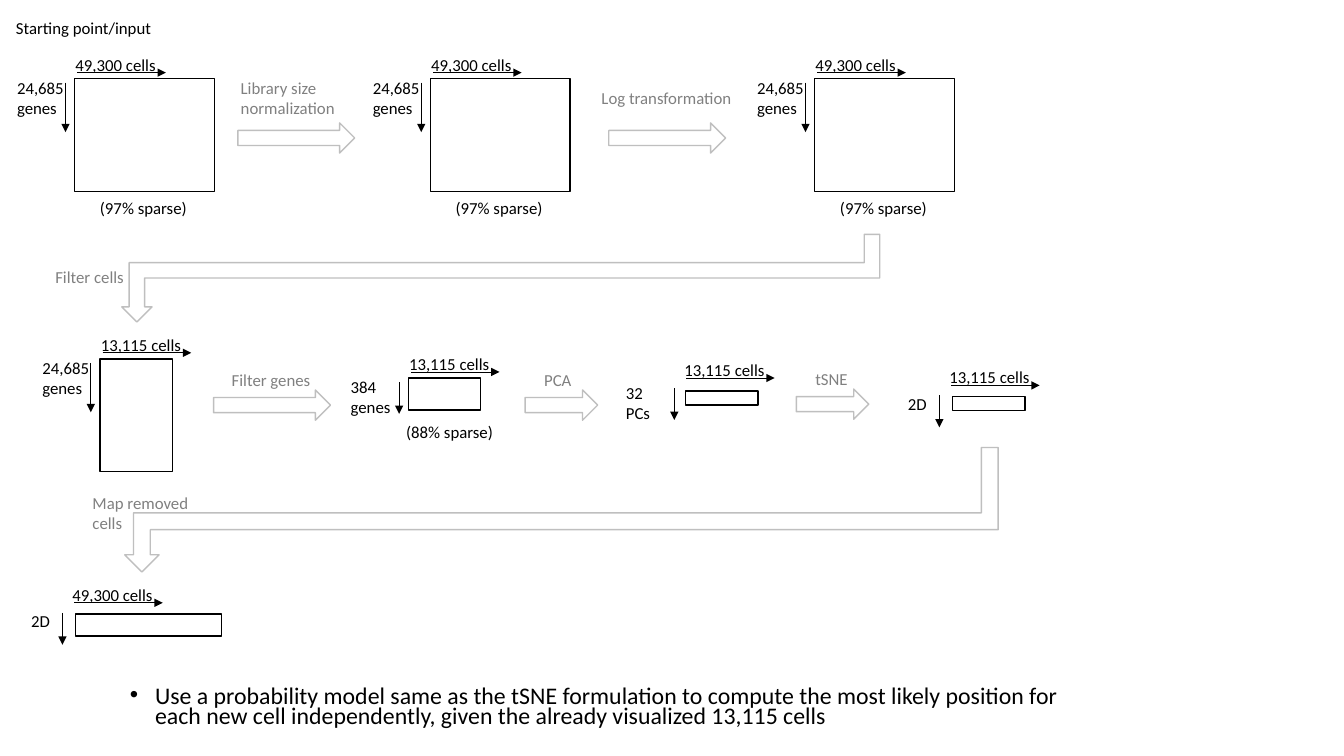
from dataclasses import dataclass

from lxml import etree
from pptx import Presentation
from pptx.dml.color import RGBColor
from pptx.enum.shapes import MSO_CONNECTOR, MSO_SHAPE
from pptx.oxml.ns import qn
from pptx.util import Pt

RECT = MSO_SHAPE.RECTANGLE
RIGHT_ARROW = MSO_SHAPE.RIGHT_ARROW
STRAIGHT = MSO_CONNECTOR.STRAIGHT


@dataclass(frozen=True)
class Theme:
    font: str = "Calibri"
    ink: RGBColor = RGBColor(0, 0, 0)
    step: RGBColor = RGBColor(0x80, 0x80, 0x80)
    arrow: RGBColor = RGBColor(0xBF, 0xBF, 0xBF)
    paper: RGBColor = RGBColor(0xFF, 0xFF, 0xFF)
    label: int = 12
    body: int = 17
    outline: float = 1
    axis: float = 0.5


THEME = Theme()
TALL, SHORT = 35.3, 22.8  # lengths of the row axes


def add_text(slide, text, x, y, w, h=None, color=THEME.ink, size=THEME.label, wrap=False):
    lines = text.split("\n")
    h = h or 7.2 + 14.4 * len(lines)
    sp = slide.shapes.add_textbox(Pt(x), Pt(y), Pt(w), Pt(h))
    tf = sp.text_frame
    tf.word_wrap = wrap
    for i, line in enumerate(lines):
        p = tf.add_paragraph() if i else tf.paragraphs[0]
        r = p.add_run()
        r.text = line
        r.font.name, r.font.size = THEME.font, Pt(size)
        r.font.color.rgb = color
    return tf


def outline(sp, color, fill=None):
    sp.shadow.inherit = False
    sp.line.color.rgb = color
    sp.line.width = Pt(THEME.outline)
    if fill is None:
        sp.fill.background()
    else:
        sp.fill.solid()
        sp.fill.fore_color.rgb = fill


def add_axis(slide, x1, y1, x2, y2):
    line = slide.shapes.add_connector(STRAIGHT, Pt(x1), Pt(y1), Pt(x2), Pt(y2))
    line.line.color.rgb = THEME.ink
    line.line.width = Pt(THEME.axis)
    etree.SubElement(line.line._get_or_add_ln(), qn("a:tailEnd"), type="triangle")
    etree.SubElement(line._element.spPr, qn("a:effectLst"))


def add_matrix(slide, x, y, w, h, cells, rows, rows_w, depth=SHORT, shift=(0, 0)):
    """Rectangle with a column axis and a row axis; shift moves it off the axes."""
    sp = slide.shapes.add_shape(RECT, Pt(x + shift[0]), Pt(y + shift[1]), Pt(w), Pt(h))
    outline(sp, THEME.ink)
    add_text(slide, cells, x - 6.5, y - 20.9, 72.7)
    dx, dy = (48.2, 4.3) if "\n" in rows else (36, 2.2)
    add_text(slide, rows, x - dx, y - dy, rows_w)
    add_axis(slide, x + 2, y - 4.3, x + 65.2, y - 4.3)
    add_axis(slide, x - 6.5, y + 2.9, x - 6.5, y + 2.9 + depth)


def add_step(slide, x, y, w):
    sp = slide.shapes.add_shape(RIGHT_ARROW, Pt(x), Pt(y), Pt(w), Pt(21.6))
    outline(sp, THEME.arrow, THEME.paper)


def add_return_arrow(slide, left, right, top, bar, tip, band, head):
    """Arrow from (right, top) down, back along bar, then down to tip."""
    mid, low, neck = left + band / 2, bar + band, tip - head / 2
    points = [
        (right, top), (right, low), (left + band, low), (left + band, neck),
        (mid + head / 2, neck), (mid, tip), (mid - head / 2, neck),
        (left, neck), (left, bar), (right - band, bar), (right - band, top),
    ]
    points = [(Pt(x), Pt(y)) for x, y in points]
    builder = slide.shapes.build_freeform(*points[0])
    builder.add_line_segments(points[1:], close=True)
    outline(builder.convert_to_shape(), THEME.arrow, THEME.paper)


def add_bullet(slide, text, x, y, w, h):
    tf = add_text(slide, text, x, y, w, h, size=THEME.body, wrap=True)
    p = tf.paragraphs[0]
    p.line_spacing = 0.7
    p.space_before = Pt(10)
    pPr = p._p.get_or_add_pPr()
    pPr.set("marL", str(Pt(18)))
    pPr.set("indent", str(-Pt(18)))
    etree.SubElement(pPr, qn("a:buFont"), typeface="Arial")
    etree.SubElement(pPr, qn("a:buChar"), char="•")


def main():
    prs = Presentation()
    prs.slide_width, prs.slide_height = Pt(960), Pt(540)
    slide = prs.slides.add_slide(prs.slide_layouts[6])

    add_text(slide, "Starting point/input", 4.3, 9.4, 111.6)

    all_cells, kept_cells, genes = "49,300 cells", "13,115 cells", "24,685\ngenes"
    for x in (53.3, 307.4, 581.9):
        add_matrix(slide, x, 56.2, 99.8, 80.6, all_cells, genes, 48.2, TALL)
        add_text(slide, "(97% sparse)", x + 11, 137.5, 77.8)
    add_matrix(slide, 71.4, 256.3, 51.8, 80.6, kept_cells, genes, 48.2, TALL)
    add_matrix(slide, 291.6, 270, 51.8, 23, kept_cells, "384\ngenes", 43.2)
    add_text(slide, "(88% sparse)", 283, 298, 77.8)
    add_matrix(slide, 488.2, 274.3, 51.8, 10.1, kept_cells, "32\nPCs", 32.4, shift=(1.4, 5))
    add_matrix(slide, 677.5, 279.6, 51.8, 10.1, kept_cells, "2D", 28, shift=(2.9, 3.6))
    add_matrix(slide, 51.1, 434.9, 104.4, 15.8, all_cells, "2D", 28, shift=(2.9, 3.6))

    for x, y, w in ((169.9, 87.8, 83.5), (434.9, 87.8, 83.5), (152.6, 278.6, 83.5),
                    (375.1, 278.6, 51.8), (568.8, 277.9, 51.8)):
        add_step(slide, x, y, w)
    add_return_arrow(slide, 92.3, 628.4, 167.4, 187.6, 230, band=11, head=21.6)
    add_return_arrow(slide, 95.4, 713, 319.7, 366.4, 408.6, band=12, head=24.5)

    for text, x, y, w in (
        ("Library size\nnormalization", 164.9, 51.8, 82.1),
        ("Log transformation", 422.6, 59, 108),
        ("Filter cells", 32.4, 187.2, 64.1),
        ("Filter genes", 158.4, 260.6, 71.3),
        ("PCA", 381.6, 260.6, 34.6),
        ("tSNE", 575.3, 259.9, 38.2),
        ("Map removed\ncells", 59, 348.5, 83.5),
    ):
        add_text(slide, text, x, y, w, color=THEME.step)

    add_bullet(
        slide,
        "Use a probability model same as the tSNE formulation to compute the most likely "
        "position for each new cell independently, given the already visualized 13,115 cells",
        85.7, 488.2, 693.4, 37.4,
    )
    prs.save("out.pptx")


if __name__ == "__main__":
    main()
